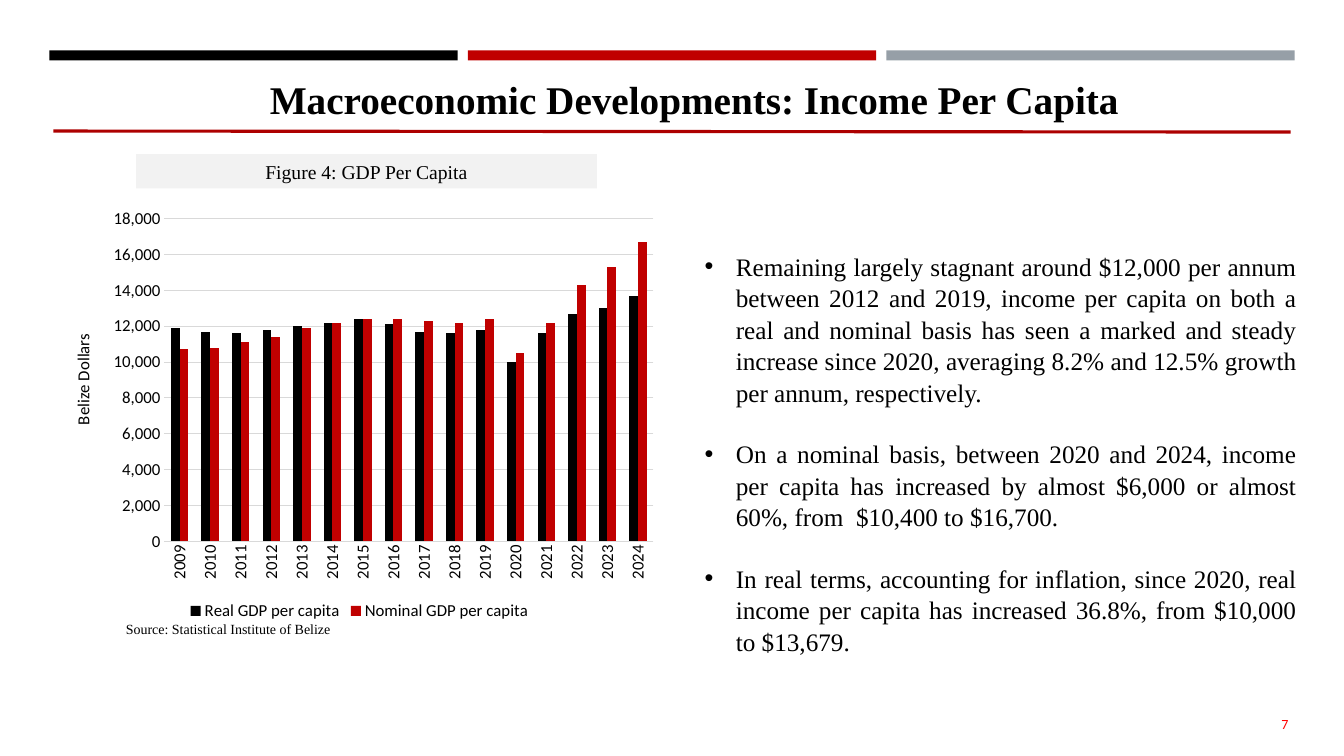
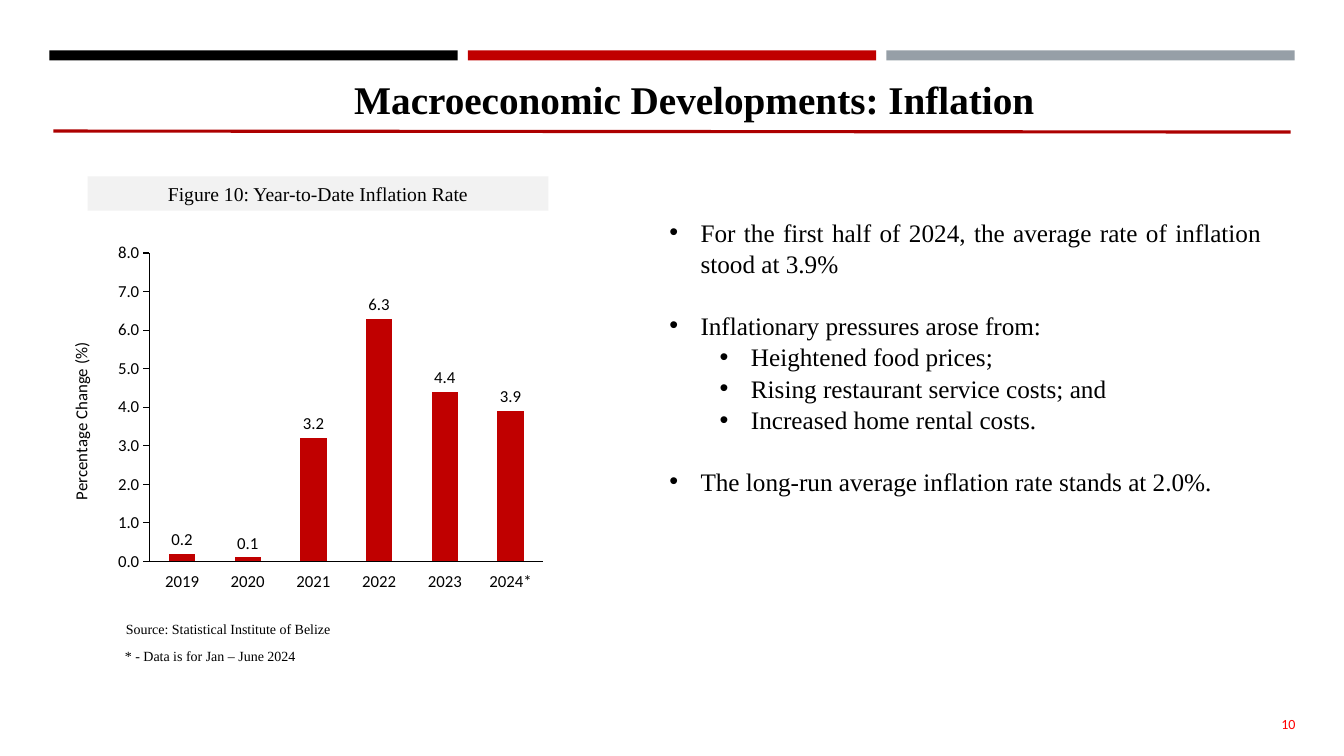
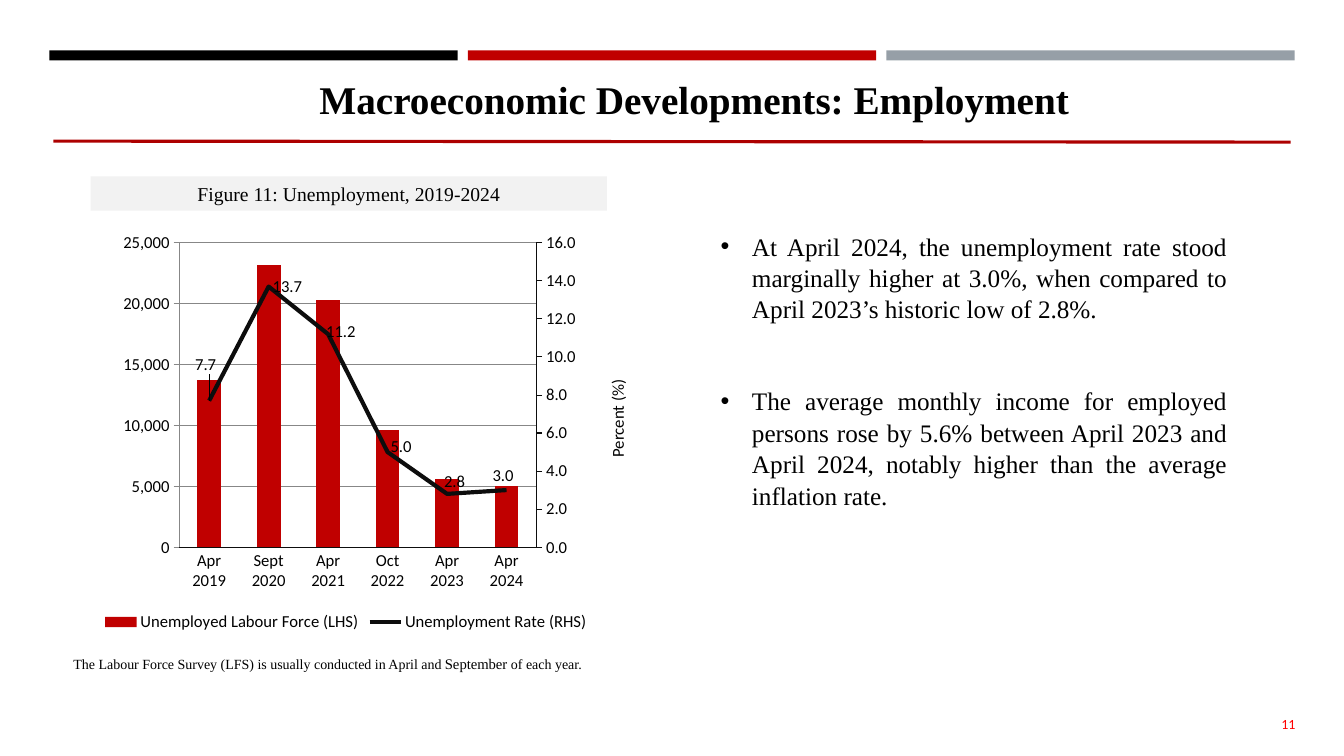
from copy import deepcopy

from lxml import etree
from pptx import Presentation
from pptx.chart.axis import ValueAxis
from pptx.chart.data import CategoryChartData
from pptx.dml.color import RGBColor
from pptx.enum.chart import (XL_CHART_TYPE, XL_LABEL_POSITION, XL_LEGEND_POSITION,
                             XL_MARKER_STYLE, XL_TICK_LABEL_POSITION, XL_TICK_MARK)
from pptx.enum.shapes import MSO_CONNECTOR, MSO_SHAPE
from pptx.enum.text import MSO_ANCHOR, PP_ALIGN
from pptx.oxml.ns import qn
from pptx.oxml.xmlchemy import OxmlElement
from pptx.util import Emu, Pt

COLUMNS = XL_CHART_TYPE.COLUMN_CLUSTERED
STRAIGHT, RECTANGLE = MSO_CONNECTOR.STRAIGHT, MSO_SHAPE.RECTANGLE
LEFT, CENTER, JUSTIFY = PP_ALIGN.LEFT, PP_ALIGN.CENTER, PP_ALIGN.JUSTIFY
TOP, MIDDLE = MSO_ANCHOR.TOP, MSO_ANCHOR.MIDDLE
TICK_NONE, TICK_OUT = XL_TICK_MARK.NONE, XL_TICK_MARK.OUTSIDE
LABELS_LOW = XL_TICK_LABEL_POSITION.LOW
LABEL_ABOVE_BAR, LABEL_RIGHT = XL_LABEL_POSITION.OUTSIDE_END, XL_LABEL_POSITION.RIGHT
LEGEND_BOTTOM = XL_LEGEND_POSITION.BOTTOM
NO_MARKER = XL_MARKER_STYLE.NONE

PX = 9144  # 100 px to the inch
BLACK, RED, GREY = "000000", "C00000", "969FA7"
RULE_RED, PAGE_RED = "AD0000", "FF0000"
CAPTION_GREY, GRID_GREY, INK = "F2F2F2", "D9D9D9", "0D0D0D"
SERIF, SANS = "Times New Roman", "Calibri"
BODY_PITCH = 21.6  # points from one line of body text to the next
BULLET_INDENT, LEVEL_INDENT = 31, 50
QUARTER_TURN = "-5400000"


# Basics
def px(length):
    return Emu(round(length * PX))


def rgb(value):
    return RGBColor.from_string(value)


def set_font(font, name, size, color=BLACK, bold=False):
    font.name, font.size, font.bold = name, Pt(size), bold
    font.color.rgb = rgb(color)


def set_line(line, color, width=0.75):
    line.color.rgb = rgb(color)
    line.width = Pt(width)


def add_rect(slide, box, color):
    rect = slide.shapes.add_shape(RECTANGLE, *map(px, box))
    rect.shadow.inherit = False
    rect.fill.solid()
    rect.fill.fore_color.rgb = rgb(color)
    rect.line.fill.background()
    return rect


def write(shape, text, size, name=SERIF, color=BLACK, bold=False, align=LEFT, anchor=TOP):
    frame = shape.text_frame
    frame.word_wrap = True
    frame.vertical_anchor = anchor
    paragraph = frame.paragraphs[0]
    paragraph.alignment = align
    paragraph.add_run().text = text
    set_font(paragraph.font, name, size, color, bold)
    return paragraph


def add_text(slide, box, text, size, **style):
    return write(slide.shapes.add_textbox(*map(px, box)), text, size, **style)


# Frame shared by the slides
def add_frame(deck, title, page, rule_y=130):
    slide = deck.slides.add_slide(deck.slide_layouts[6])
    for i, color in enumerate((BLACK, RED, GREY)):
        add_rect(slide, (49 + 415 * i, 50, 405, 10), color)
    heading = add_text(slide, (221, 83, 935, 47), title, 28, bold=True, align=CENTER)
    heading.line_spacing = Pt(24)
    rule = slide.shapes.add_connector(STRAIGHT, px(53), px(rule_y), px(1280), px(rule_y + 1))
    set_line(rule.line, RULE_RED, 2.25)
    etree.SubElement(rule._element.spPr, qn("a:effectLst"))
    add_text(slide, (1261, 705, 115, 40), page, 10, name=SANS, color=PAGE_RED)
    return slide


def add_caption(slide, box, text):
    write(add_rect(slide, box, CAPTION_GREY), text, 14, align=CENTER, anchor=MIDDLE)


def add_note(slide, box, text, align=LEFT):
    return add_text(slide, box, text, 10, align=align)


def add_bullets(slide, box, items):
    """Each item is (level, empty lines above, text)."""
    frame = slide.shapes.add_textbox(*map(px, box)).text_frame
    frame.word_wrap = True
    for i, (level, lines_above, text) in enumerate(items):
        paragraph = frame.add_paragraph() if i else frame.paragraphs[0]
        paragraph.add_run().text = text
        paragraph.level = level
        paragraph.alignment = JUSTIFY
        props = paragraph._p.get_or_add_pPr()
        props.set("marL", str(px(BULLET_INDENT + LEVEL_INDENT * level)))
        props.set("indent", str(px(-BULLET_INDENT)))
        etree.SubElement(props, qn("a:buFont")).set("typeface", "Arial")
        etree.SubElement(props, qn("a:buChar")).set("char", "•")
        paragraph.line_spacing = 1.04
        paragraph.space_before = Pt(BODY_PITCH * lines_above)
        set_font(paragraph.font, SERIF, 18)


# Chart parts
def set_layout(parent, index, chart_size, place, mode="edge"):
    """Puts a chart part at place, in px of the chart box."""
    for old in parent.findall(qn("c:layout")):
        parent.remove(old)
    layout = OxmlElement("c:layout")
    parent.insert(index, layout)
    manual = etree.SubElement(layout, qn("c:manualLayout"))
    settings = [("layoutTarget", "inner")] if len(place) == 4 else []
    if mode == "edge":
        settings += [("xMode", mode), ("yMode", mode)]
    settings += [(key, str(round(length / chart_size[i % 2], 4)))
                 for i, (key, length) in enumerate(zip("xywh", place))]
    for key, value in settings:
        etree.SubElement(manual, qn("c:" + key)).set("val", value)


def style_axis(axis, line, tick=TICK_NONE):
    axis.major_tick_mark, axis.minor_tick_mark = tick, TICK_NONE
    set_font(axis.tick_labels.font, SANS, 12)
    if line:
        set_line(axis.format.line, line)
    else:
        axis.format.line.fill.background()


def style_value_axis(axis, size, title, title_at, top, step, number_format,
                     line=None, tick=TICK_OUT, grid=None):
    style_axis(axis, line, tick)
    axis.minimum_scale, axis.maximum_scale, axis.major_unit = 0, top, step
    axis.tick_labels.number_format = number_format
    axis.tick_labels.number_format_is_linked = False
    axis.has_major_gridlines = bool(grid)
    if grid:
        set_line(axis.major_gridlines.format.line, grid)
    frame = axis.axis_title.text_frame
    frame.text = title
    frame._txBody.bodyPr.set("rot", QUARTER_TURN)
    frame._txBody.bodyPr.set("vert", "horz")
    set_font(frame.paragraphs[0].font, SANS, 12)
    set_layout(axis.axis_title._element, 1, size, title_at)


def add_columns(slide, box, plot_box, categories, series, legend=True):
    """Each series is (name, colour, number format, values)."""
    data = CategoryChartData()
    data.categories = categories
    for name, _, number_format, values in series:
        data.add_series(name, values, number_format)
    chart = slide.shapes.add_chart(COLUMNS, *map(px, box), data).chart
    set_font(chart.font, SANS, 12)
    chart.has_title = False
    chart.has_legend = legend
    if legend:
        chart.legend.position = LEGEND_BOTTOM
        chart.legend.include_in_layout = False
        set_font(chart.legend.font, SANS, 12)
    plot = chart.plots[0]
    plot.gap_width, plot.overlap, plot.vary_by_categories = 150, 0, False
    for drawn, (_, color, _, _) in zip(plot.series, series):
        drawn.format.fill.solid()
        drawn.format.fill.fore_color.rgb = rgb(color)
    set_layout(chart._chartSpace.chart.plotArea, 0, box[2:], plot_box)
    return chart


def move_last_series_to_line(chart):
    """Turns the last column series into a line; returns it and its right axis."""
    area = chart._chartSpace.chart.plotArea
    columns = area.find(qn("c:barChart"))
    moved = columns.findall(qn("c:ser"))[-1]
    for tag in ("c:invertIfNegative", "c:spPr"):
        for part in moved.findall(qn(tag)):
            moved.remove(part)
    line_chart = OxmlElement("c:lineChart")
    columns.addnext(line_chart)
    etree.SubElement(line_chart, qn("c:grouping")).set("val", "standard")
    etree.SubElement(line_chart, qn("c:varyColors")).set("val", "0")
    line_chart.append(moved)
    etree.SubElement(line_chart, qn("c:marker")).set("val", "1")

    left = area.find(qn("c:valAx"))
    right, hidden = deepcopy(left), deepcopy(area.find(qn("c:catAx")))
    left.addnext(right)
    right.addnext(hidden)
    for axis, own, other in ((hidden, "101", "102"), (right, "102", "101")):
        etree.SubElement(line_chart, qn("c:axId")).set("val", own)
        axis.find(qn("c:axId")).set("val", own)
        axis.find(qn("c:crossAx")).set("val", other)
    hidden.find(qn("c:delete")).set("val", "1")
    right.find(qn("c:axPos")).set("val", "r")
    right.find(qn("c:crosses")).set("val", "max")
    return chart.plots[1].series[0], ValueAxis(right)


# Slides
def income_slide(deck):
    slide = add_frame(deck, "Macroeconomic Developments: Income Per Capita", "7")
    add_bullets(slide, (689, 243, 607, 368), [
        (0, 0, "Remaining largely stagnant around $12,000 per annum between 2012 and 2019, "
               "income per capita on both a real and nominal basis has seen a marked and "
               "steady increase since 2020, averaging 8.2% and 12.5% growth per annum, "
               "respectively."),
        (0, 1, "On a nominal basis, between 2020 and 2024, income per capita has increased "
               "by almost $6,000 or almost 60%, from  $10,400 to $16,700."),
        (0, 1, "In real terms, accounting for inflation, since 2020, real income per capita "
               "has increased 36.8%, from $10,000 to $13,679."),
    ])
    add_note(slide, (115, 611, 284, 27), "Source: Statistical Institute of Belize")

    box = (53, 200, 607, 420)
    chart = add_columns(slide, box, (110, 17, 485, 320), [str(y) for y in range(2009, 2025)], [
        ("Real GDP per capita", BLACK, "#,##0",
         (11900, 11700, 11600, 11800, 12000, 12200, 12400, 12100,
          11700, 11600, 11800, 10000, 11600, 12700, 13000, 13700)),
        ("Nominal GDP per capita", RED, "#,##0",
         (10700, 10800, 11100, 11400, 11900, 12200, 12400, 12400,
          12300, 12200, 12400, 10500, 12200, 14300, 15300, 16700)),
    ])
    style_value_axis(chart.value_axis, box[2:], "Belize Dollars", (15, 128), 18000, 2000,
                     "#,##0", tick=TICK_NONE, grid=GRID_GREY)
    years = chart.category_axis
    style_axis(years, GRID_GREY)
    years._element.find(qn("c:txPr")).find(qn("a:bodyPr")).set("rot", QUARTER_TURN)
    add_caption(slide, (135, 153, 457, 34), "Figure 4: GDP Per Capita")


def inflation_slide(deck):
    slide = add_frame(deck, "Macroeconomic Developments: Inflation", "10")
    add_caption(slide, (87, 175, 457, 34), "Figure 10: Year-to-Date Inflation Rate")
    add_bullets(slide, (654, 209, 607, 429), [
        (0, 0, "For the first half of 2024, the average rate of inflation stood at 3.9%"),
        (0, 1, "Inflationary pressures arose from:"),
        (1, 0, "Heightened food prices;"),
        (1, 0, "Rising restaurant service costs; and"),
        (1, 0, "Increased home rental costs."),
        (0, 1, "The long-run average inflation rate stands at 2.0%."),
    ])

    box = (43, 209, 545, 415)
    chart = add_columns(slide, box, (105, 42, 391, 306),
                        ["2019", "2020", "2021", "2022", "2023", "2024*"],
                        [("Series 1", RED, "0.0", (0.2, 0.1, 3.2, 6.3, 4.4, 3.9))],
                        legend=False)
    style_value_axis(chart.value_axis, box[2:], "Percentage Change (%)", (23, 128), 8, 1,
                     "#,##0.0", line=BLACK)
    style_axis(chart.category_axis, BLACK)
    chart.category_axis.tick_label_position = LABELS_LOW
    rates = chart.plots[0].series[0].data_labels
    rates.show_value, rates.position = True, LABEL_ABOVE_BAR
    rates.number_format, rates.number_format_is_linked = "0.0", False
    set_font(rates.font, SANS, 12)

    add_note(slide, (114, 637, 367, 27), "* - Data is for Jan – June 2024")
    add_note(slide, (115, 611, 284, 27), "Source: Statistical Institute of Belize")


def employment_slide(deck):
    slide = add_frame(deck, "Macroeconomic Developments: Employment", "11", rule_y=140)
    add_caption(slide, (90, 175, 512, 34), "Figure 11: Unemployment, 2019-2024")
    add_bullets(slide, (705, 223, 522, 408), [
        (0, 0, "At April 2024, the unemployment rate stood marginally higher at 3.0%, when "
               "compared to April 2023’s historic low of 2.8%."),
        (0, 2, "The average monthly income for employed persons rose by 5.6% between April "
               "2023 and April 2024, notably higher than the average inflation rate."),
    ])
    survey = add_note(slide, (63, 645, 532, 28),
                      "The Labour Force Survey (LFS) is usually conducted in April and ", JUSTIFY)
    month = survey.add_run()
    month.text, month.font.size = "September", Pt(10.5)
    survey.add_run().text = " of each year."

    box = (63, 223, 565, 408)
    chart = add_columns(
        slide, box, (116, 18, 357, 302),
        ["Apr 2019", "Sept 2020", "Apr 2021", "Oct 2022", "Apr 2023", "Apr 2024"],
        [("Unemployed Labour Force (LHS)", RED, "#,##0",
          (13700, 23200, 20300, 9600, 5600, 5000)),
         ("Unemployment Rate (RHS)", INK, "0.0", (7.7, 13.7, 11.2, 5, 2.8, 3))])
    rate, rate_axis = move_last_series_to_line(chart)
    style_value_axis(chart.value_axis, box[2:], "Number of Unemployed Persons", (14, 93),
                     25000, 5000, "#,##0", line=INK)
    style_value_axis(rate_axis, box[2:], "Percent (%)", (540, 150), 16, 2, "0.0", line=INK)
    style_axis(chart.category_axis, INK)

    # Rate line and its labels, each moved from its place right of the point
    set_line(rate.format.line, INK, 3)
    rate.smooth, rate.marker.style = False, NO_MARKER
    labels = rate.data_labels
    labels.show_value, labels.position = True, LABEL_RIGHT
    labels.number_format, labels.number_format_is_linked = "0.0", False
    set_font(labels.font, SANS, 12)
    shifts = [(-18, -36), (0, 0), (-6, -2), (-1, -5), (-7, -12), (-18, -14)]
    for i, shift in enumerate(shifts):
        label = rate.points[i].data_label
        set_font(label.font, SANS, 12)
        label.position = LABEL_RIGHT
        set_layout(label._get_or_add_dLbl(), 1, box[2:], shift, mode="factor")


def main():
    deck = Presentation()
    deck.slide_width, deck.slide_height = px(1333), px(750)
    income_slide(deck)
    inflation_slide(deck)
    employment_slide(deck)
    deck.save("out.pptx")


if __name__ == "__main__":
    main()
